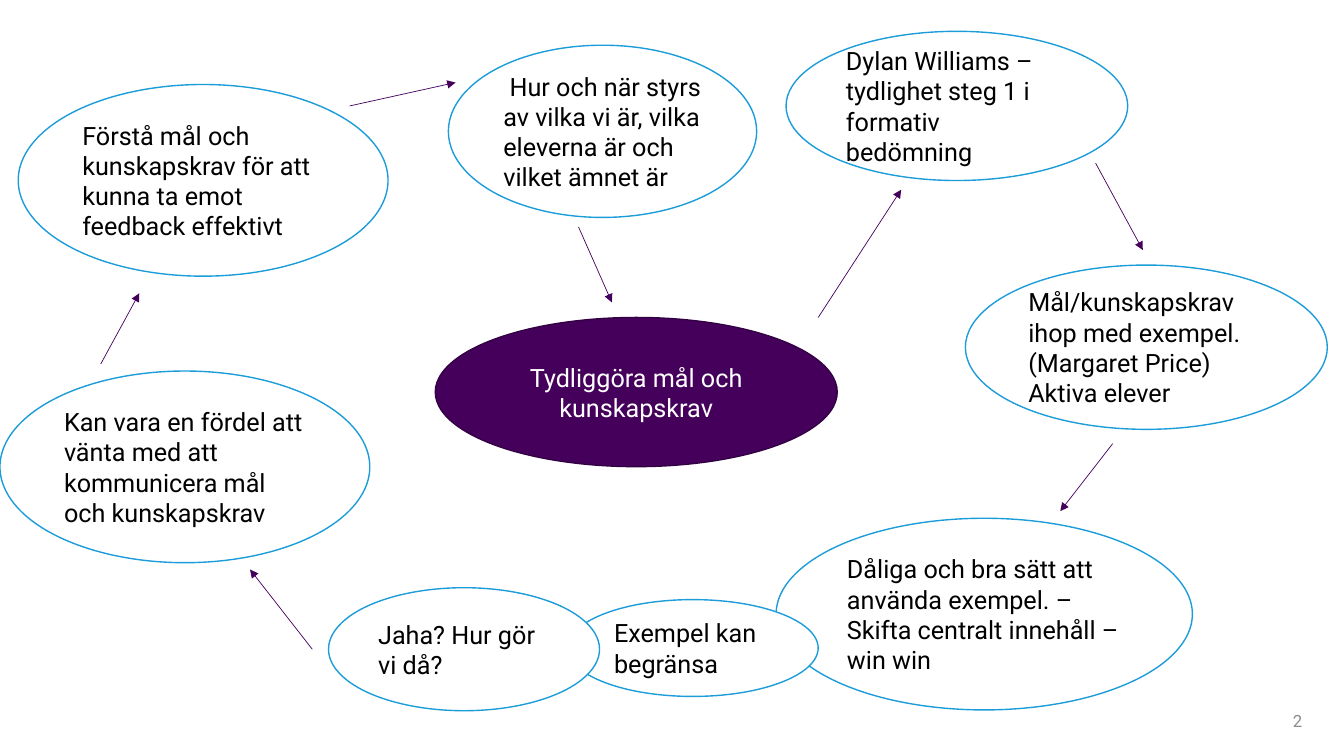
"""Build a mind map slide about making goals and knowledge requirements clear."""
from lxml.etree import SubElement
from pptx import Presentation
from pptx.dml.color import RGBColor
from pptx.enum.shapes import MSO_CONNECTOR as CONN, MSO_SHAPE as SHAPE
from pptx.enum.text import MSO_ANCHOR as ANCHOR, PP_ALIGN as ALIGN
from pptx.oxml.ns import qn
from pptx.util import Cm, Pt

PURPLE = RGBColor(0x45, 0x00, 0x5C)
DARK_PURPLE = RGBColor(0x33, 0x00, 0x44)
BLUE = RGBColor(0x1C, 0x9C, 0xD8)
GREY = RGBColor(0x8C, 0x8C, 0x8C)
WHITE = RGBColor(0xFF, 0xFF, 0xFF)
BLACK = RGBColor(0, 0, 0)

IDEAS = [
    ((19.56, 13.06, 10.49, 4.83),
     ["Dåliga och bra sätt att använda exempel. – Skifta centralt innehåll – win win"]),
    ((24.33, 6.68, 9.12, 4.14),
     ["Mål/kunskapskrav ihop med exempel. (Margaret Price)", "Aktiva elever"]),
    ((19.81, 0.79, 8.61, 3.76),
     ["Dylan Williams – tydlighet steg 1 i formativ bedömning"]),
    ((14.3, 15.11, 6.32, 2.44), ["Exempel kan begränsa"]),
    ((8.28, 14.81, 6.83, 3.1), ["Jaha? Hur gör vi då?"]),
    ((0, 9.35, 9.32, 4.83),
     ["Kan vara en fördel att vänta med att kommunicera mål och kunskapskrav"]),
    ((0.46, 2.13, 9.32, 4.83),
     ["Förstå mål och kunskapskrav för att kunna ta emot feedback effektivt"]),
    ((11.3, 1.14, 7.77, 4.34),
     [" Hur och när styrs av vilka vi är, vilka eleverna är och vilket ämnet är"]),
]
ARROWS = [
    (20.62, 8, 22.71, 4.78),
    (27.61, 4.11, 28.8, 6.3),
    (28.04, 11.18, 26.72, 12.88),
    (7.87, 16.36, 6.3, 14.35),
    (2.54, 9.17, 3.51, 7.39),
    (8.81, 2.67, 11.48, 2.08),
    (14.58, 5.72, 15.42, 7.62),
]


class MindMap:
    """Hold the text style and the current slide."""

    def __init__(self, slide):
        self.shapes = slide.shapes
        self.style = {"name": "Roboto", "size": Pt(18)}

    def put_text(self, sp, lines, color, align, **changes):
        """Fill a shape with formatted paragraphs."""
        tf = sp.text_frame
        tf.word_wrap = True
        tf.vertical_anchor = ANCHOR.MIDDLE
        tf.text = "\n".join(lines)
        for p in tf.paragraphs:
            p.alignment = align
            for r in p.runs:
                for key, value in {**self.style, **changes}.items():
                    setattr(r.font, key, value)
                r.font.color.rgb = color

    def bubble(self, box, lines, fill=WHITE, line=BLUE, color=BLACK, align=ALIGN.LEFT):
        """Add an ellipse with text."""
        sp = self.shapes.add_shape(SHAPE.OVAL, *map(Cm, box))
        sp.shadow.inherit = False
        sp.fill.solid()
        sp.fill.fore_color.rgb = fill
        sp.line.color.rgb = line
        sp.line.width = Pt(1)
        self.put_text(sp, lines, color, align)

    def arrow(self, ends):
        """Add a thin line with an arrowhead at its end."""
        cxn = self.shapes.add_connector(CONN.STRAIGHT, *map(Cm, ends))
        cxn.line.color.rgb = PURPLE
        cxn.line.width = Pt(0.5)
        props = cxn.element.spPr
        SubElement(props.find(qn("a:ln")), qn("a:tailEnd"), type="triangle")
        SubElement(props, qn("a:effectLst"))

    def number(self, box, text):
        """Add the slide number."""
        sp = self.shapes.add_textbox(*map(Cm, box))
        self.put_text(sp, [text], GREY, ALIGN.RIGHT, size=Pt(12))


def main():
    """Build and save the slide."""
    prs = Presentation()
    prs.slide_width, prs.slide_height = Cm(33.87), Cm(19.05)
    mind_map = MindMap(prs.slides.add_slide(prs.slide_layouts[6]))
    mind_map.number((25.45, 17.65, 7.62, 1.02), "2")
    mind_map.bubble((10.97, 8, 10.13, 3.76), ["Tydliggöra mål och kunskapskrav"],
                    PURPLE, DARK_PURPLE, WHITE, ALIGN.CENTER)
    for box, lines in IDEAS:
        mind_map.bubble(box, lines)
    for ends in ARROWS:
        mind_map.arrow(ends)
    prs.save("out.pptx")


if __name__ == "__main__":
    main()
